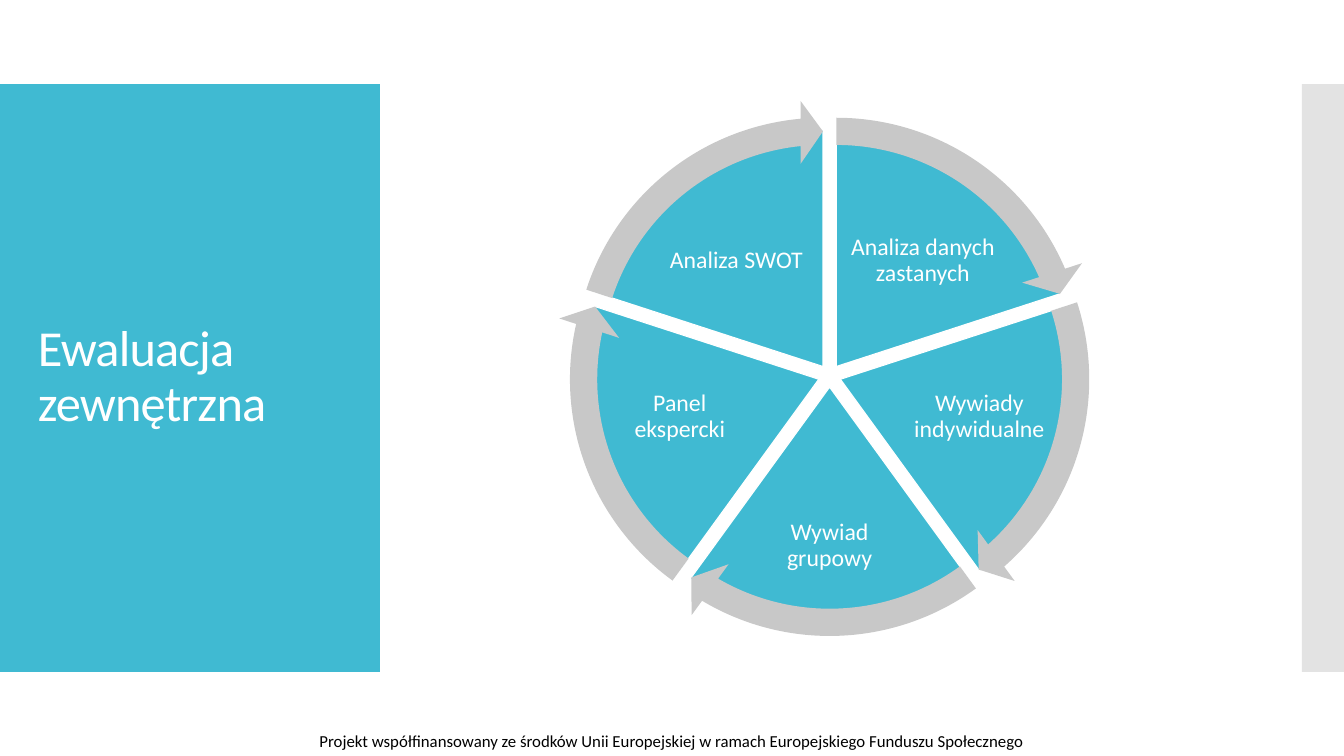
"""Build the external evaluation slide with its five-part cycle wheel."""
import math

import pptx
import pptx.dml.color
import pptx.enum.shapes
import pptx.enum.text
import pptx.oxml.ns
import pptx.util
from lxml import etree

Pt = pptx.util.Pt
RGB = pptx.dml.color.RGBColor.from_string
SHAPE = pptx.enum.shapes.MSO_SHAPE
ALIGN = pptx.enum.text.PP_ALIGN
ANCHOR = pptx.enum.text.MSO_ANCHOR
AUTO_SIZE = pptx.enum.text.MSO_AUTO_SIZE

TITLE = "Ewaluacja zewnętrzna"
FUNDING = ("Projekt współfinansowany ze środków Unii Europejskiej "
           "w ramach Europejskiego Funduszu Społecznego")
METHODS = [
    ("Analiza danych zastanych", (66.6, -82.2), (108.7, 72.7)),
    ("Wywiady indywidualne", (107, 29.2), (100.8, 80.6)),
    ("Wywiad grupowy", (0, 121.6), (96.5, 88.6)),
    ("Panel ekspercki", (-107, 29.2), (100.8, 80.6)),
    ("Analiza SWOT", (-66.6, -82.2), (108.7, 72.7)),
]
THEME = {
    "font": "Calibri", "accent": "40BAD2", "grey": "C8C8C8",
    "light": "FFFFFF", "dark": "000000",
    "title": 36, "label": 17, "footer": 12,
}
WHEEL = {"x": 592.6, "y": 268.4, "gap": 8.1, "pie": 338.4, "ring": 381}
FULL_TURN = 216
TOP = 162
HEAD = 3.275


def add_filled(shapes, kind, box, color, adjustments=(), outline=None):
    shape = shapes.add_shape(kind, *map(Pt, box))
    shape.shadow.inherit = False
    shape.fill.solid()
    shape.fill.fore_color.rgb = RGB(color)
    if outline:
        shape.line.color.rgb = RGB(outline)
        shape.line.width = Pt(0.85)
    else:
        shape.line.fill.background()
    for index, value in enumerate(adjustments):
        shape.adjustments[index] = value
    return shape


def add_text(shapes, text, box, size, color, frame_format, paragraph_format):
    frame = shapes.add_textbox(*map(Pt, box)).text_frame
    for name, value in {"word_wrap": True, **frame_format}.items():
        setattr(frame, name, value)
    paragraph = frame.paragraphs[0]
    for name, value in paragraph_format.items():
        setattr(paragraph, name, value)
    run = paragraph.add_run()
    run.text = text
    for name, value in {"name": THEME["font"], "size": Pt(size)}.items():
        setattr(run.font, name, value)
    run.font.color.rgb = RGB(color)
    return run


def centred_box(x, y, width, height):
    return x - width / 2, y - height / 2, width, height


def add_wheel(slide):
    wheel = slide.shapes.add_group_shape().shapes
    step = FULL_TURN / len(METHODS)
    inset = Pt(1.5)
    label_frame = {"vertical_anchor": ANCHOR.MIDDLE, "margin_left": inset, "margin_right": inset,
                   "margin_top": inset, "margin_bottom": inset}
    label_paragraph = {"alignment": ALIGN.CENTER, "line_spacing": 0.9}
    arrows = []
    for index, (label, (dx, dy), size) in enumerate(METHODS):
        start = (TOP + index * step) % FULL_TURN
        end = (start + step) % FULL_TURN
        middle = math.radians((index + 0.5) * 360 / len(METHODS))
        x = WHEEL["x"] + WHEEL["gap"] * math.sin(middle)
        y = WHEEL["y"] - WHEEL["gap"] * math.cos(middle)
        add_filled(wheel, SHAPE.PIE, centred_box(x, y, WHEEL["pie"], WHEEL["pie"]),
                   THEME["accent"], (start, end), THEME["light"])
        add_text(wheel, label, centred_box(WHEEL["x"] + dx, WHEEL["y"] + dy, *size),
                 THEME["label"], THEME["light"], label_frame, label_paragraph)
        arrows.append((centred_box(x, y, WHEEL["ring"], WHEEL["ring"]),
                       (0.051, HEAD, end - HEAD, start, 0.059)))
    for box, adjustments in arrows:
        add_filled(wheel, SHAPE.CIRCULAR_ARROW, box, THEME["grey"], adjustments)


def main():
    deck = pptx.Presentation()
    deck.slide_width, deck.slide_height = Pt(960), Pt(540)
    slide = deck.slides.add_slide(deck.slide_layouts[6])

    add_filled(slide.shapes, SHAPE.RECTANGLE, (0, 60, 271.3, 420), THEME["accent"])
    edge_band = add_filled(slide.shapes, SHAPE.RECTANGLE, (930, 60, 30, 420), THEME["grey"])
    band_color = edge_band._element.find(".//" + pptx.oxml.ns.qn("a:srgbClr"))
    etree.SubElement(band_color, pptx.oxml.ns.qn("a:alpha"), val="50000")

    add_text(slide.shapes, FUNDING, (159.1, 518.4, 641.5, 21.6), THEME["footer"], THEME["dark"],
             {"auto_size": AUTO_SIZE.SHAPE_TO_FIT_TEXT}, {"alignment": ALIGN.CENTER})
    title = add_text(slide.shapes, TITLE, (20, 88.6, 231.8, 362.2), THEME["title"], THEME["light"],
                     {"vertical_anchor": ANCHOR.MIDDLE}, {"line_spacing": 0.9})
    title._r.get_or_add_rPr().set("spc", "-60")

    add_wheel(slide)
    deck.save("out.pptx")


if __name__ == "__main__":
    main()
